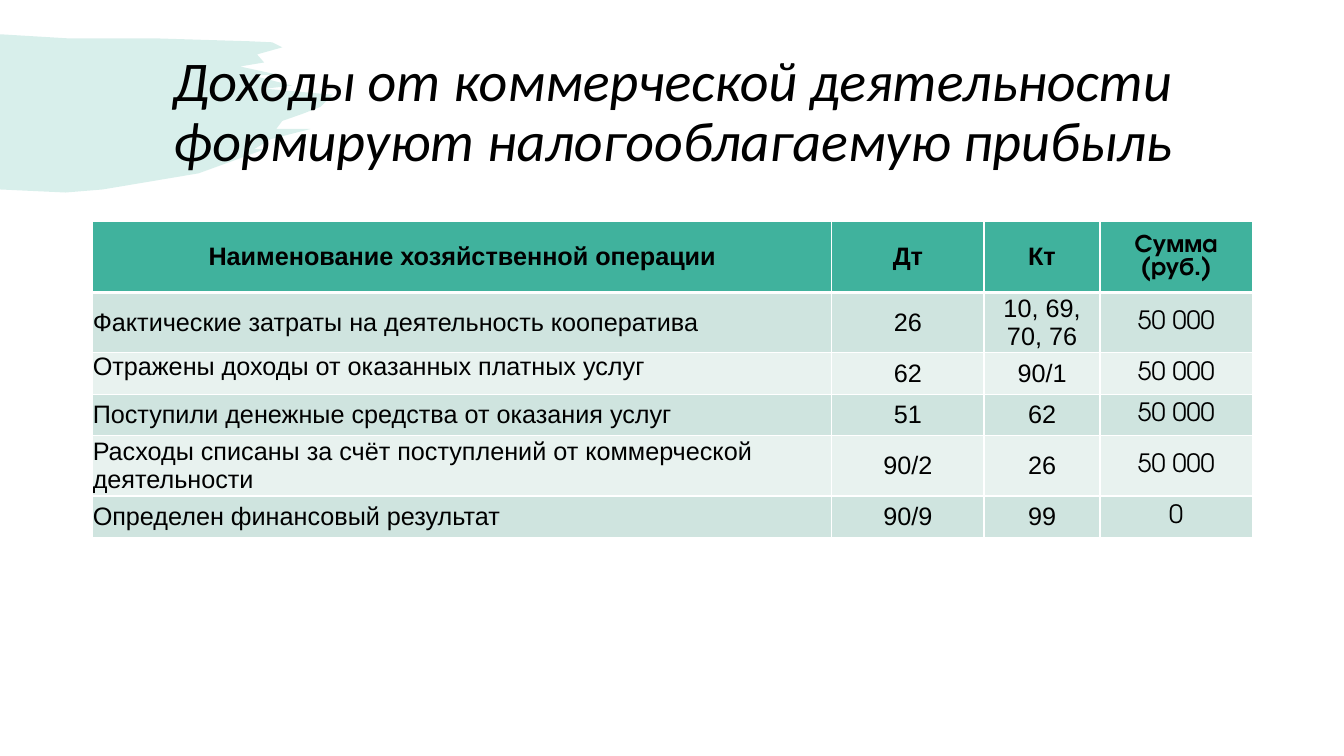
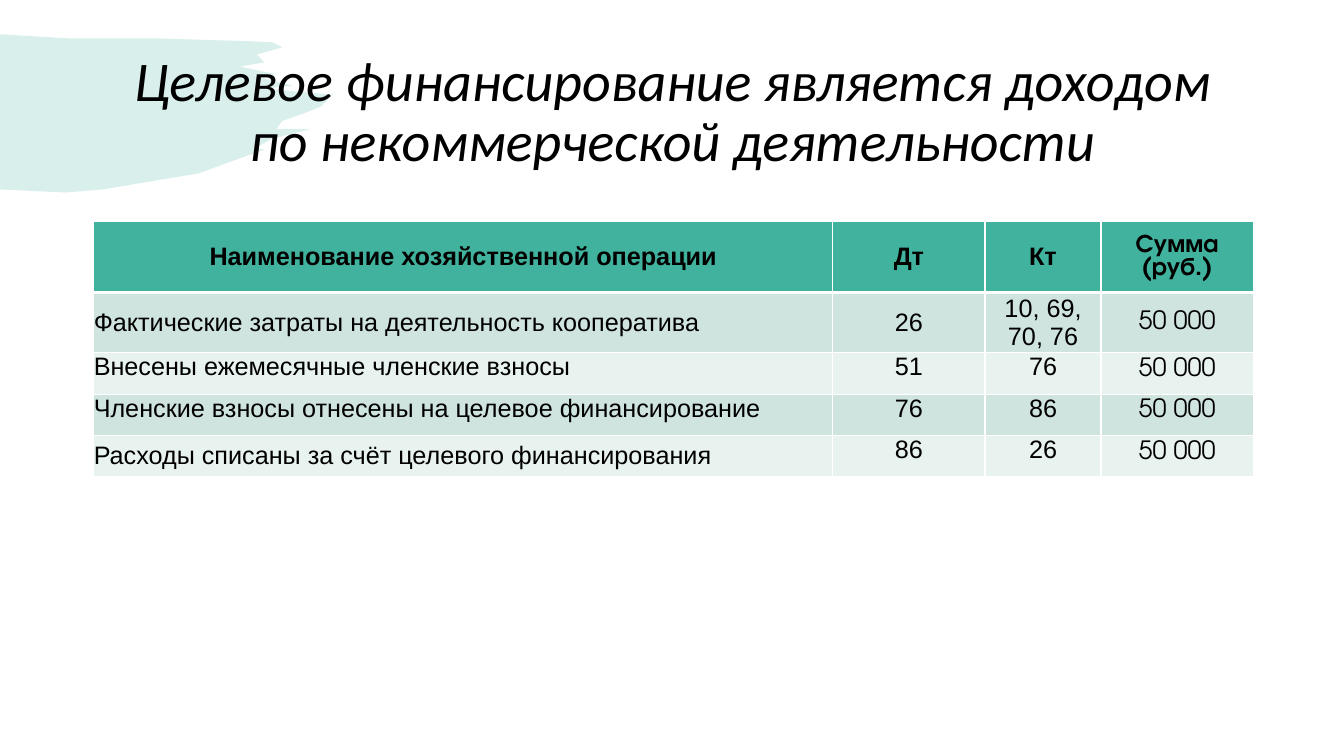
from lxml import etree
from pptx import Presentation
from pptx.dml.color import RGBColor
from pptx.enum.text import MSO_ANCHOR, PP_ALIGN
from pptx.oxml.ns import qn
from pptx.util import Inches, Pt

LEFT, CENTER = PP_ALIGN.LEFT, PP_ALIGN.CENTER
TOP, MIDDLE = MSO_ANCHOR.TOP, MSO_ANCHOR.MIDDLE
BLANK_LAYOUT = 6

COLORS = {"accent": "40B29D", "band_dark": "CFE4DF", "band_light": "E8F2EF",
          "text": "000000", "border": "FFFFFF"}
TITLE_FONT, TABLE_FONT, SUM_FONT = "Calibri", "Arial", "TeX Gyre Adventor"

SLIDE_SIZE = (13.33, 7.5)
TITLE_BOX = (0.92, 0.4, 11.5, 1.45)
TABLE_TOP, TABLE_WIDTH, ROW_HEIGHT = 2.2, 11.5, 0.41
COLUMN_WEIGHTS = (7.33, 1.51, 1.15, 1.51)
SUM_COLUMN = 3
THIN, THICK = 1, 3

# Brush stroke outline in inches: upper edge, ragged right end, lower edge
BRUSH_OUTLINE = [
    (0, 0.34), (0.66, 0.38), (1.51, 0.38), (2.48, 0.41), (2.7, 0.42), (2.8, 0.47),
    (2.55, 0.54), (2.62, 0.62), (2.38, 0.66), (2.75, 0.74), (2.51, 0.75),
    (2.9, 0.85), (2.63, 0.88), (3.3, 0.94), (3.18, 1.06), (3, 1.13), (2.8, 1.2),
    (2.74, 1.28), (3.08, 1.28), (2.69, 1.38), (2.52, 1.48), (2.63, 1.48),
    (1.97, 1.72), (1.02, 1.88), (0.65, 1.91), (0, 1.88),
]

HEADER = ("Наименование хозяйственной операции", "Дт", "Кт", "Сумма (руб.)")
COSTS = ("Фактические затраты на деятельность кооператива", "26", "10, 69, 70, 76", "50 000")
# top_cells holds (row, column) of the cells whose text sits at the top
SLIDES = [
    {
        "title": "Доходы от коммерческой деятельности формируют налогооблагаемую прибыль",
        "left": 0.92,
        "rows": [
            HEADER,
            COSTS,
            ("Отражены доходы от оказанных платных услуг", "62", "90/1", "50 000"),
            ("Поступили денежные средства от оказания услуг", "51", "62", "50 000"),
            ("Расходы списаны за счёт поступлений от коммерческой деятельности",
             "90/2", "26", "50 000"),
            ("Определен финансовый результат", "90/9", "99", "0"),
        ],
        "top_cells": {(2, 0)},
    },
    {
        "title": "Целевое финансирование является доходом по некоммерческой деятельности",
        "left": 0.93,
        "rows": [
            HEADER,
            COSTS,
            ("Внесены ежемесячные членские взносы", "51", "76", "50 000"),
            ("Членские взносы отнесены на целевое финансирование", "76", "86", "50 000"),
            ("Расходы списаны за счёт целевого финансирования", "86", "26", "50 000"),
        ],
        "top_cells": {(row, col) for row in (2, 3, 4) for col in range(4)} - {(4, 0)},
    },
]


def rgb(name):
    return RGBColor.from_string(COLORS[name])


def style_paragraph(paragraph, font, size, align, bold=False, italic=False):
    paragraph.alignment = align
    paragraph.font.name = font
    paragraph.font.size = Pt(size)
    paragraph.font.bold = bold
    paragraph.font.italic = italic
    paragraph.font.color.rgb = rgb("text")


def add_brush_to_layout(layout, slide):
    """Build the brush stroke on a slide, then move it to the shared layout."""
    start, *outline = [(Inches(x), Inches(y)) for x, y in BRUSH_OUTLINE]
    builder = slide.shapes.build_freeform(*start)
    builder.add_line_segments(outline, close=True)
    brush = builder.convert_to_shape()
    brush.shadow.inherit = False
    brush.line.fill.background()
    brush.fill.solid()
    brush.fill.fore_color.rgb = rgb("accent")
    color = brush._element.spPr.find(qn("a:solidFill"))[0]
    etree.SubElement(color, qn("a:alpha"), val="20000")
    layout.shapes._spTree.append(brush._element)


def add_title(slide, text, box):
    frame = slide.shapes.add_textbox(*map(Inches, box)).text_frame
    frame.word_wrap = True
    frame.vertical_anchor = MIDDLE
    paragraph = frame.paragraphs[0]
    paragraph.text = text
    paragraph.line_spacing = 0.9
    style_paragraph(paragraph, TITLE_FONT, 40, CENTER, italic=True)


def set_borders(cell, top, bottom):
    properties = cell._tc.get_or_add_tcPr()
    widths = {"a:lnL": THIN, "a:lnR": THIN, "a:lnT": top, "a:lnB": bottom}
    for position, (tag, width) in enumerate(widths.items()):
        line = etree.Element(qn(tag), w=str(Pt(width)))
        fill = etree.SubElement(line, qn("a:solidFill"))
        etree.SubElement(fill, qn("a:srgbClr"), val=COLORS["border"])
        properties.insert(position, line)


def fill_cell(cell, text, row, col, anchor):
    is_header, is_sum = row == 0, col == SUM_COLUMN
    cell.text = text
    cell.vertical_anchor = anchor
    if not is_sum:
        cell.margin_left = cell.margin_right = cell.margin_top = cell.margin_bottom = 0
    style_paragraph(cell.text_frame.paragraphs[0], SUM_FONT if is_sum else TABLE_FONT, 18,
                    CENTER if is_header or col else LEFT, bold=is_header)
    band = "band_dark" if row % 2 else "band_light"
    cell.fill.solid()
    cell.fill.fore_color.rgb = rgb("accent" if is_header else band)
    set_borders(cell, THICK if row == 1 else THIN, THICK if is_header else THIN)


def add_entries_table(slide, rows, top_cells, left, top, width):
    table = slide.shapes.add_table(
        len(rows), len(HEADER), Inches(left), Inches(top),
        Inches(width), Inches(ROW_HEIGHT * len(rows))).table
    for column, weight in zip(table.columns, COLUMN_WEIGHTS):
        column.width = Inches(width * weight / sum(COLUMN_WEIGHTS))
    for row, texts in enumerate(rows):
        table.rows[row].height = Inches(ROW_HEIGHT)
        for col, text in enumerate(texts):
            anchor = TOP if (row, col) in top_cells else MIDDLE
            fill_cell(table.cell(row, col), text, row, col, anchor)


def main():
    deck = Presentation()
    deck.slide_width, deck.slide_height = map(Inches, SLIDE_SIZE)
    layout = deck.slide_layouts[BLANK_LAYOUT]
    for number, content in enumerate(SLIDES):
        slide = deck.slides.add_slide(layout)
        if number == 0:
            add_brush_to_layout(layout, slide)
        add_title(slide, content["title"], TITLE_BOX)
        add_entries_table(slide, content["rows"], content["top_cells"],
                          content["left"], TABLE_TOP, TABLE_WIDTH)
    deck.save("out.pptx")


if __name__ == "__main__":
    main()
